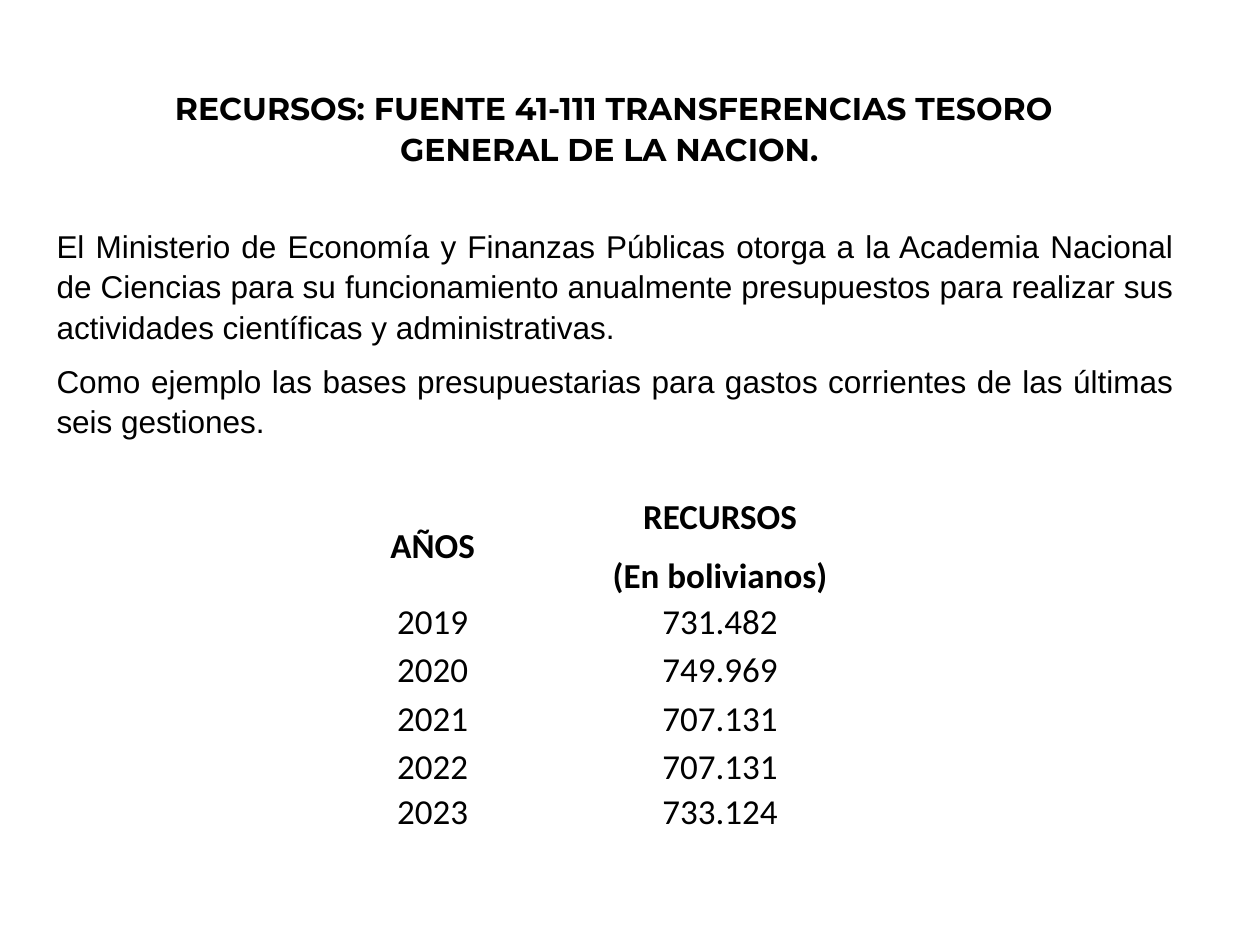
from dataclasses import dataclass

from pptx import Presentation
from pptx.dml.color import RGBColor
from pptx.enum.text import MSO_ANCHOR, PP_ALIGN
from pptx.util import Pt

HEADING = "RECURSOS: FUENTE 41-111 TRANSFERENCIAS TESORO GENERAL DE LA NACION. "
EXPLANATION = [
    "El Ministerio de Economía y Finanzas Públicas otorga a la Academia Nacional "
    "de Ciencias para su funcionamiento anualmente presupuestos para realizar sus "
    "actividades científicas y administrativas. ",
    "Como ejemplo las bases presupuestarias para gastos corrientes de las últimas "
    "seis gestiones.",
]
BUDGET = [
    ("AÑOS", "RECURSOS\n(En bolivianos)"),
    ("2019", "731.482"),
    ("2020", "749.969"),
    ("2021", "707.131"),
    ("2022", "707.131"),
    ("2023", "733.124"),
]

# left, top, width, height
HEADING_BOX = (90, 46, 521.5, 52.5)
EXPLANATION_BOX = (25.2, 124.5, 652.5, 130.5)
BUDGET_ORIGIN = (184.5, 281.5)
COLUMN_WIDTHS = (125.5, 203)
ROW_HEIGHTS = (59, 27.5, 27.5, 28.5, 26, 26)


@dataclass(frozen=True)
class Theme:
    ink: RGBColor = RGBColor(0, 0, 0)
    heading_font: str = "Montserrat"
    body_font: str = "Arial"
    table_font: str = "Calibri"
    text_size: int = 18
    table_size: int = 20
    line_spacing: float = 1.07
    space_after: int = 8


THEME = Theme()


def write(frame, text, font, size, align, bold=False):
    """Fill a text frame, one paragraph per line of text."""
    frame.text = text
    frame.word_wrap = True
    for paragraph in frame.paragraphs:
        paragraph.alignment = align
        paragraph.line_spacing = THEME.line_spacing
        paragraph.space_after = Pt(THEME.space_after)
        for run in paragraph.runs:
            run.font.name = font
            run.font.size = Pt(size)
            run.font.bold = bold
            run.font.color.rgb = THEME.ink


def add_text(slide, box, text, font, align, bold=False):
    frame = slide.shapes.add_textbox(*map(Pt, box)).text_frame
    write(frame, text, font, THEME.text_size, align, bold)


def add_budget(slide):
    size = (sum(COLUMN_WIDTHS), sum(ROW_HEIGHTS))
    budget = slide.shapes.add_table(
        len(BUDGET), len(COLUMN_WIDTHS), *map(Pt, BUDGET_ORIGIN + size)
    ).table
    budget.first_row = budget.horz_banding = False
    for column, width in zip(budget.columns, COLUMN_WIDTHS):
        column.width = Pt(width)
    for r, (values, height) in enumerate(zip(BUDGET, ROW_HEIGHTS)):
        budget.rows[r].height = Pt(height)
        for c, value in enumerate(values):
            cell = budget.cell(r, c)
            cell.fill.background()
            cell.vertical_anchor = MSO_ANCHOR.MIDDLE
            cell.margin_left = cell.margin_right = Pt(5)
            cell.margin_top = cell.margin_bottom = Pt(0)
            write(cell.text_frame, value, THEME.table_font, THEME.table_size,
                  PP_ALIGN.CENTER, bold=r == 0)
    # "No Style, No Grid" leaves the cells without borders
    style = budget._tbl.tblPr.find("{*}tableStyleId")
    style.text = "{2D5ABB26-0587-4C30-8999-92F81FD0307C}"


def main():
    deck = Presentation()
    deck.slide_width, deck.slide_height = Pt(720), Pt(540)
    slide = deck.slides.add_slide(deck.slide_layouts[6])
    add_text(slide, EXPLANATION_BOX, "\n".join(EXPLANATION), THEME.body_font,
             PP_ALIGN.JUSTIFY)
    add_text(slide, HEADING_BOX, HEADING, THEME.heading_font, PP_ALIGN.CENTER, bold=True)
    add_budget(slide)
    deck.save("out.pptx")


if __name__ == "__main__":
    main()
